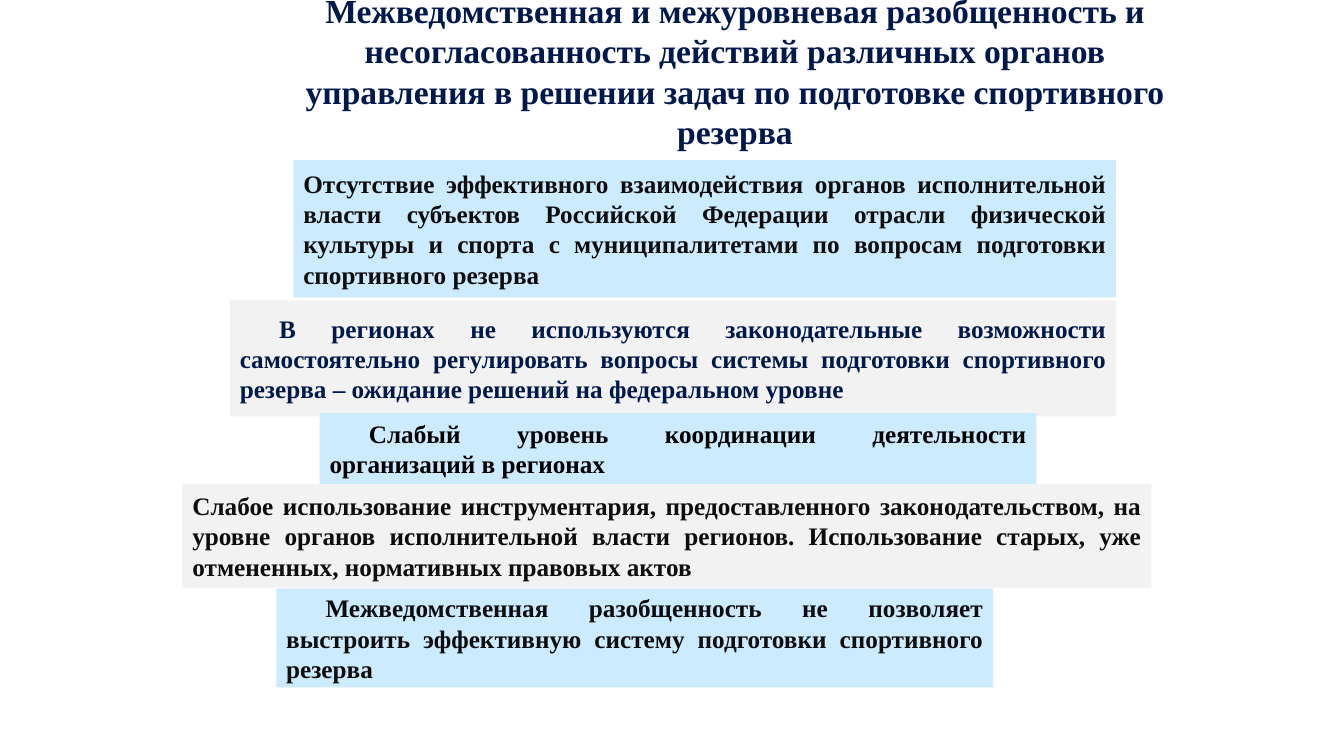
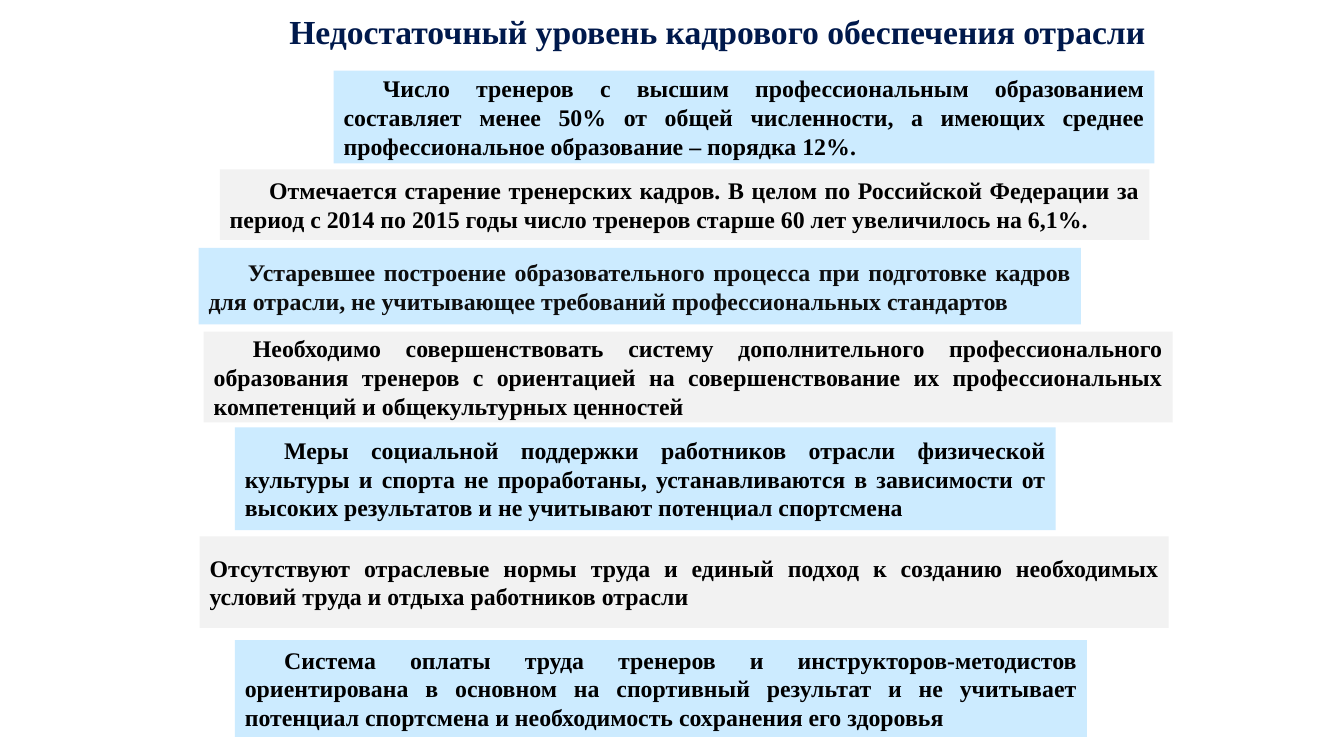
from dataclasses import dataclass

from pptx import Presentation
from pptx.dml.color import RGBColor
from pptx.enum.shapes import MSO_SHAPE
from pptx.enum.text import MSO_ANCHOR, MSO_AUTO_SIZE, PP_ALIGN
from pptx.util import Inches, Pt


@dataclass(frozen=True)
class Theme:
    font: str = "Times New Roman"
    navy: str = "00194C"
    black: str = "000000"
    soft_black: str = "0D0D0D"
    band_fills: tuple = ("CCEBFF", "F2F2F2")
    title_size: int = 24
    first_line: float = 0.39


THEME = Theme()


@dataclass(frozen=True)
class Band:
    place: tuple  # left, top, width, height in inches
    text: str
    color: str = THEME.black
    indented: bool = True


# Slide content, from top to bottom
COORDINATION = {
    "title": "Межведомственная и межуровневая разобщенность и несогласованность действий "
             "различных органов управления в решении задач по подготовке спортивного резерва",
    "title_place": (2.91, 0.02, 8.76, 1.36),
    "text_size": 18,
    "bands": [
        Band((2.91, 1.59, 8.16, 1.36),
             "Отсутствие эффективного взаимодействия органов исполнительной власти субъектов "
             "Российской Федерации отрасли физической культуры и спорта с муниципалитетами "
             "по вопросам подготовки спортивного резерва", THEME.soft_black, False),
        Band((2.28, 2.98, 8.79, 1.15),
             "В регионах не используются законодательные возможности самостоятельно "
             "регулировать вопросы системы подготовки спортивного резерва – ожидание решений "
             "на федеральном уровне", THEME.navy),
        Band((3.17, 4.1, 7.11, 0.7),
             "Слабый уровень координации деятельности организаций в регионах"),
        Band((1.81, 4.8, 9.61, 1.03),
             "Слабое использование инструментария, предоставленного законодательством, "
             "на уровне органов исполнительной власти регионов. Использование старых, "
             "уже отмененных, нормативных правовых актов", THEME.soft_black, False),
        Band((2.74, 5.84, 7.11, 0.98),
             "Межведомственная разобщенность не позволяет выстроить эффективную систему "
             "подготовки спортивного резерва", THEME.soft_black),
    ],
}

STAFFING = {
    "title": "Недостаточный уровень кадрового обеспечения отрасли",
    "title_place": (2.53, 0, 9.17, 0.62),
    "text_size": 17,
    "bands": [
        Band((3.31, 0.7, 8.14, 0.92),
             "Число тренеров с высшим профессиональным образованием составляет менее 50% "
             "от общей численности, а имеющих среднее профессиональное образование – "
             "порядка 12%."),
        Band((2.18, 1.68, 9.22, 0.7),
             "Отмечается старение тренерских кадров. В целом по Российской Федерации за "
             "период с 2014 по 2015 годы число тренеров старше 60 лет увеличилось на 6,1%."),
        Band((1.97, 2.46, 8.75, 0.76),
             "Устаревшее построение образовательного процесса при подготовке кадров для "
             "отрасли, не учитывающее требований профессиональных стандартов",
             THEME.soft_black),
        Band((2.02, 3.29, 9.61, 0.9),
             "Необходимо совершенствовать систему дополнительного профессионального "
             "образования тренеров с ориентацией на совершенствование их профессиональных "
             "компетенций и общекультурных ценностей"),
        Band((2.33, 4.24, 8.14, 1.02),
             "Меры социальной поддержки работников отрасли физической культуры и спорта не "
             "проработаны, устанавливаются в зависимости от высоких результатов и не "
             "учитывают потенциал спортсмена"),
        Band((1.98, 5.32, 9.61, 0.91),
             "Отсутствуют отраслевые нормы труда и единый подход к созданию необходимых "
             "условий труда и отдыха работников отрасли", indented=False),
        Band((2.33, 6.35, 8.45, 0.96),
             "Система оплаты труда тренеров и инструкторов-методистов ориентирована в "
             "основном на спортивный результат и не учитывает потенциал спортсмена и "
             "необходимость сохранения его здоровья"),
    ],
}


def set_values(target, values):
    for name, value in values.items():
        setattr(target, name, value)


def write_text(box, text, size, color, alignment):
    """Fill a box with one bold paragraph and return the paragraph."""
    frame = box.text_frame
    set_values(frame, {"word_wrap": True, "auto_size": MSO_AUTO_SIZE.NONE,
                       "vertical_anchor": MSO_ANCHOR.MIDDLE})
    para = frame.paragraphs[0]
    para.alignment = alignment
    span = para.add_run()
    span.text = text
    set_values(span.font, {"name": THEME.font, "size": Pt(size), "bold": True})
    span.font.color.rgb = RGBColor.from_string(color)
    return para


def add_title(page, text, place):
    title = page.shapes.title
    set_values(title, dict(zip(("left", "top", "width", "height"), map(Inches, place))))
    write_text(title, text, THEME.title_size, THEME.navy, PP_ALIGN.CENTER)


def add_band(page, band, fill, size):
    box = page.shapes.add_shape(MSO_SHAPE.RECTANGLE, *map(Inches, band.place))
    box.shadow.inherit = False
    box.fill.solid()
    box.fill.fore_color.rgb = RGBColor.from_string(fill)
    box.line.fill.background()
    para = write_text(box, band.text, size, band.color, PP_ALIGN.JUSTIFY)
    if band.indented:
        para._p.get_or_add_pPr().set("indent", str(Inches(THEME.first_line)))


def add_page(deck, content):
    page = deck.slides.add_slide(deck.slide_layouts.get_by_name("Title Only"))
    add_title(page, content["title"], content["title_place"])
    for index, band in enumerate(content["bands"]):
        fill = THEME.band_fills[index % len(THEME.band_fills)]
        add_band(page, band, fill, content["text_size"])


def main():
    deck = Presentation()
    set_values(deck, {"slide_width": Inches(13.33), "slide_height": Inches(7.5)})
    for content in (COORDINATION, STAFFING):
        add_page(deck, content)
    deck.save("out.pptx")


if __name__ == "__main__":
    main()
